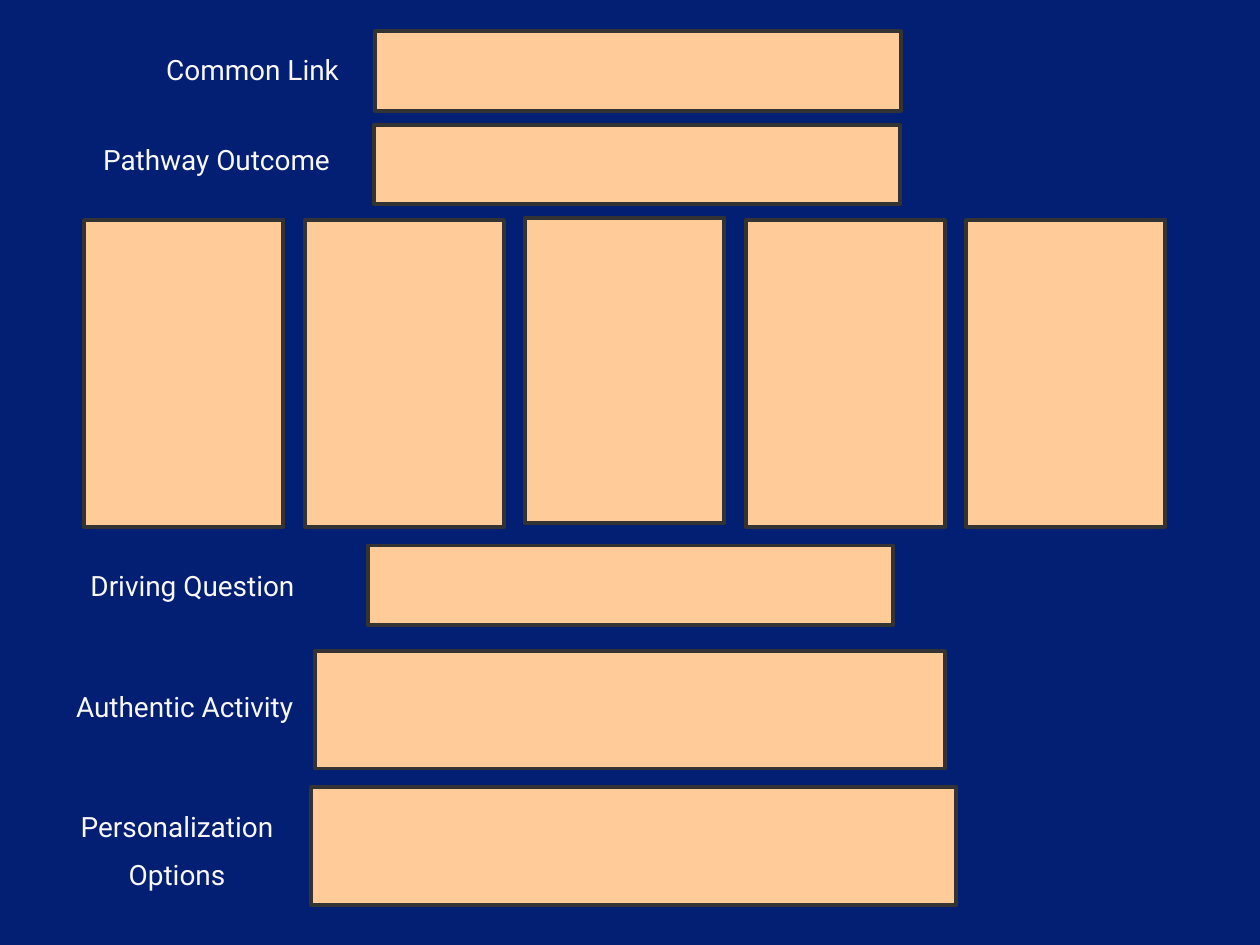
import pptx
import pptx.dml.color
import pptx.enum.shapes
import pptx.enum.text
import pptx.util
from pptx.util import Inches


def color(value):
    return pptx.dml.color.RGBColor.from_string(value)


class PathwaySlide:
    background = "031F73"
    box_fill = "FFCC99"
    box_line = "333333"
    text_color = "F8F8F8"
    font_name = "Roboto"

    def __init__(self, presentation):
        self.slide = presentation.slides.add_slide(presentation.slide_layouts[6])
        fill = self.slide.background.fill
        fill.solid()
        fill.fore_color.rgb = color(self.background)

    def box(self, left, top, width, height):
        shape = self.slide.shapes.add_shape(
            pptx.enum.shapes.MSO_SHAPE.RECTANGLE,
            Inches(left), Inches(top), Inches(width), Inches(height))
        shape.shadow.inherit = False
        shape.fill.solid()
        shape.fill.fore_color.rgb = color(self.box_fill)
        shape.line.color.rgb = color(self.box_line)
        shape.line.width = pptx.util.Pt(2.25)

    def label(self, lines, left, top, width, height=0.37,
              alignment=pptx.enum.text.PP_ALIGN.CENTER):
        shape = self.slide.shapes.add_textbox(
            Inches(left), Inches(top), Inches(width), Inches(height))
        frame = shape.text_frame
        frame.word_wrap = True
        frame.auto_size = pptx.enum.text.MSO_AUTO_SIZE.SHAPE_TO_FIT_TEXT
        frame.text = "\n".join(lines)
        for index, paragraph in enumerate(frame.paragraphs):
            paragraph.alignment = alignment
            if index:
                paragraph.space_before = pptx.util.Pt(8)
            paragraph.font.name = self.font_name
            paragraph.font.size = pptx.util.Pt(16)
            paragraph.font.color.rgb = color(self.text_color)


def main():
    presentation = pptx.Presentation()
    presentation.slide_width = Inches(10)
    presentation.slide_height = Inches(7.5)
    pathway = PathwaySlide(presentation)
    left_aligned = pptx.enum.text.PP_ALIGN.LEFT

    for left, top in [(2.98, 0.25), (2.92, 4.33)]:
        pathway.box(left, top, 4.17, 0.63)

    for column in range(5):
        top, height = (1.73, 2.42) if column == 2 else (1.75, 2.43)
        pathway.box(0.67 + 1.75 * column, top, 1.58, height)

    pathway.box(2.5, 5.17, 5, 0.93)
    pathway.box(2.47, 6.25, 5.12, 0.93)

    pathway.label(["Common Link"], 1.18, 0.37, 1.65)
    pathway.label(["Authentic Activity"], 0.42, 5.42, 2.09)
    pathway.label(["Personalization", "Options"], 0.42, 6.38, 1.97, 0.77)
    pathway.label(["Driving Question"], 0.62, 4.46, 2.06, alignment=left_aligned)

    pathway.box(2.97, 0.99, 4.17, 0.63)
    pathway.label(["Pathway Outcome"], 0.72, 1.08, 2.14, alignment=left_aligned)

    presentation.save("out.pptx")


if __name__ == "__main__":
    main()
